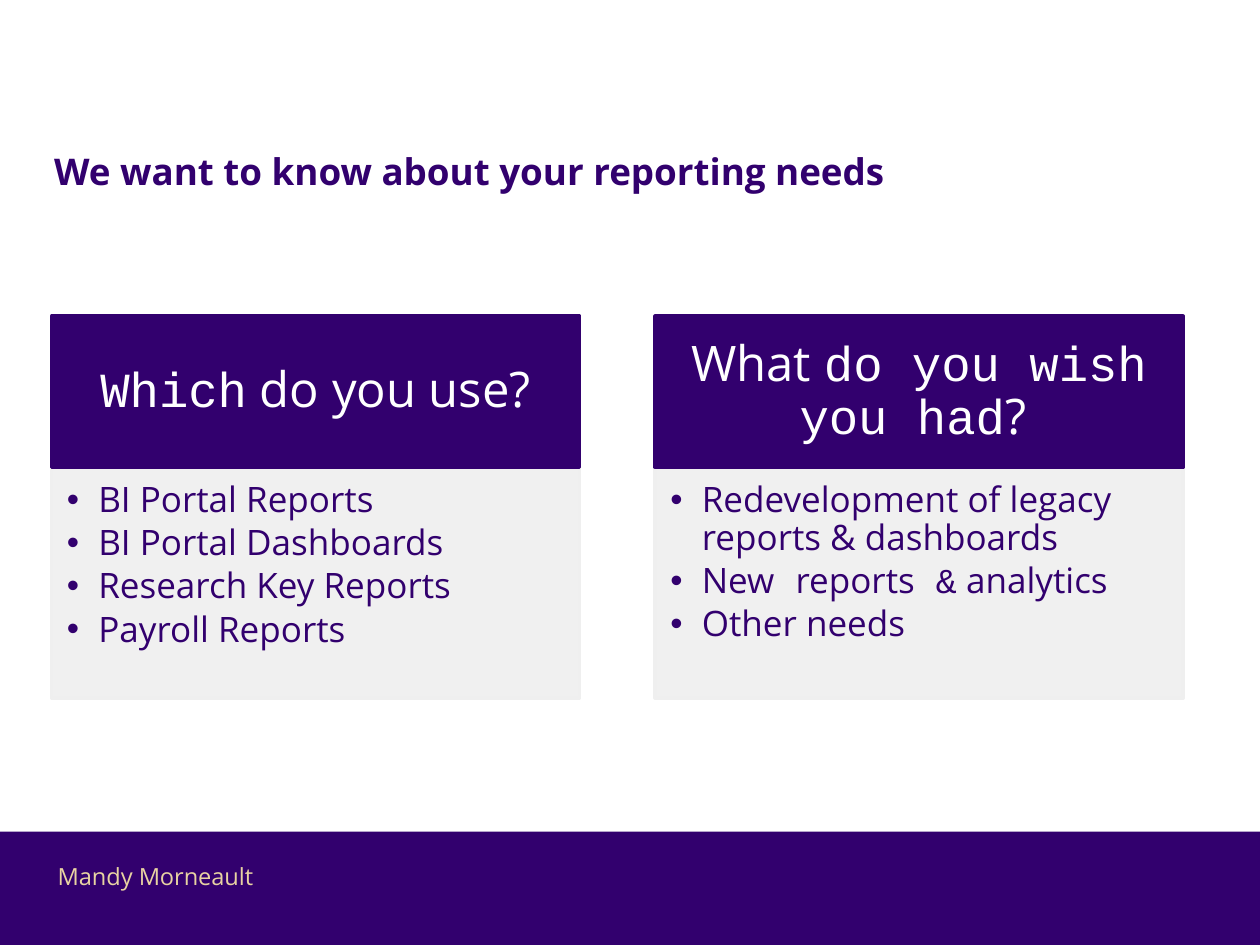
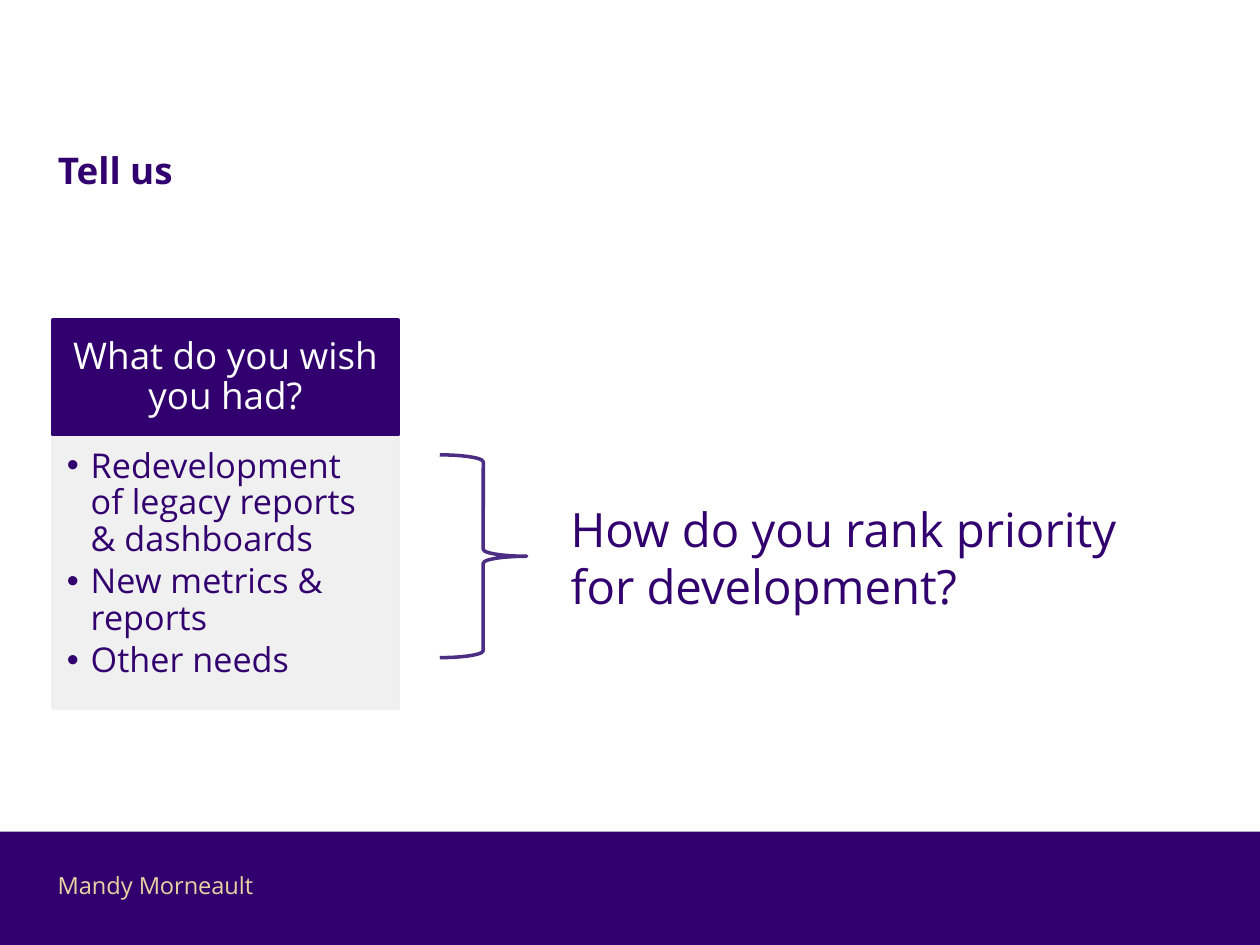
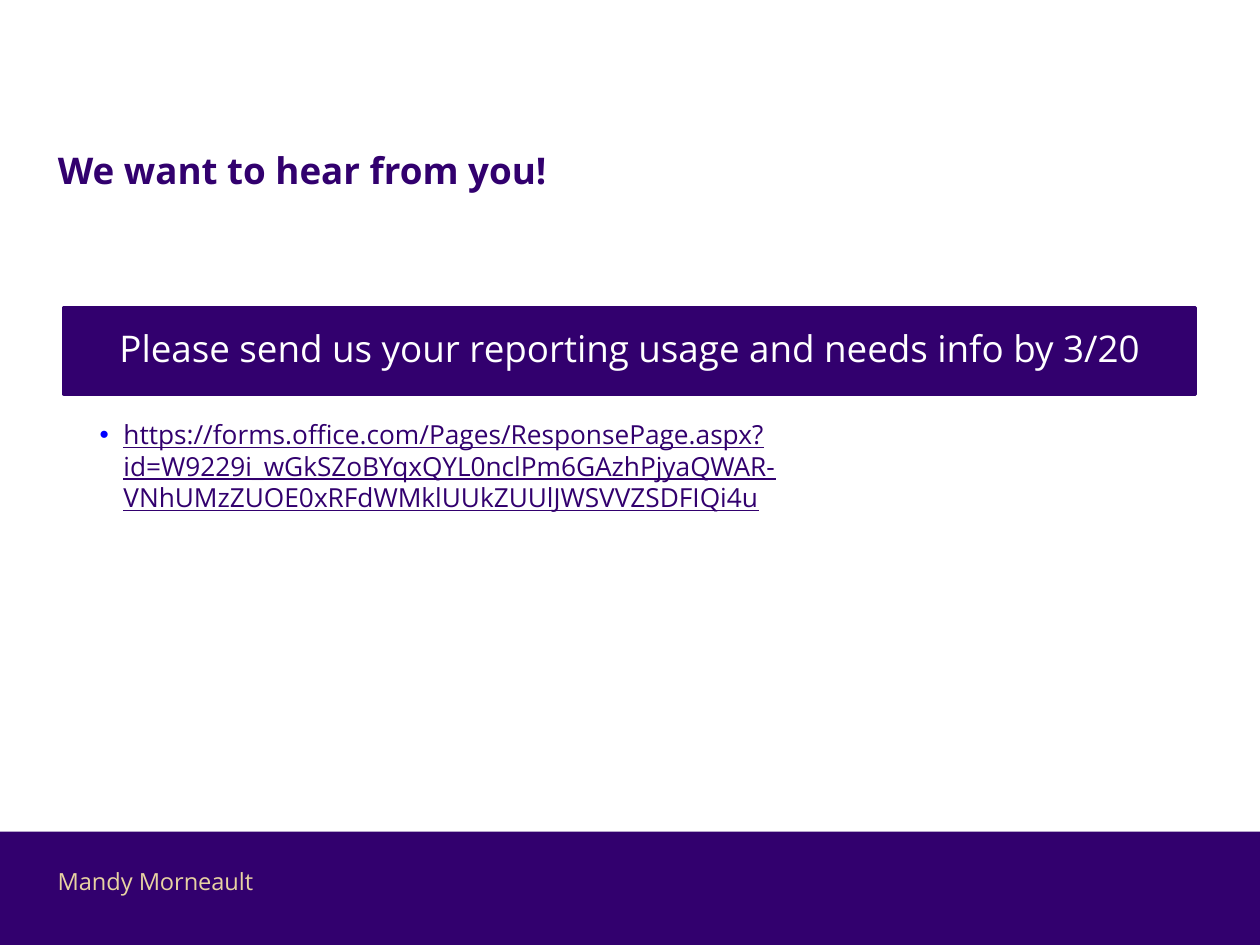
from lxml import etree
from pptx import Presentation
from pptx.dml.color import RGBColor as RGB
from pptx.enum.shapes import MSO_SHAPE as Shape
from pptx.enum.text import MSO_ANCHOR as Anchor, MSO_AUTO_SIZE as Auto, PP_ALIGN as Align
from pptx.oxml import parse_xml
from pptx.oxml.ns import nsdecls, qn
from pptx.util import Inches, Pt

INK = {"plum": "32006E", "brace": "4B2E83", "gold": "E8D3A2",
       "pale": "EFEFEF", "white": "FFFFFF", "blue": "0000FF"}
SANS, MONO = "Open Sans", "Courier New"


def place(shape, at, pad, fill=None, anchor=Anchor.TOP):
    """Set position, insets and flat fill; return the text frame."""
    shape.left, shape.top, shape.width, shape.height = map(Inches, at)
    if fill:
        shape.fill.solid()
        shape.fill.fore_color.rgb = shape.line.color.rgb = RGB.from_string(INK[fill])
        shape.line.width = Pt(2)
    frame = shape.text_frame
    frame.word_wrap, frame.auto_size = True, Auto.NONE
    frame.vertical_anchor = anchor
    (frame.margin_left, frame.margin_top,
     frame.margin_right, frame.margin_bottom) = map(Inches, pad)
    return frame


def write(para, text, size, tint, align=Align.LEFT, space=1.0, bold=None):
    """Fill a paragraph; every second piece between bars is monospaced."""
    para.alignment, para.line_spacing, para.space_before = align, space, Pt(0)
    font = para.font
    font.name, font.size, font.bold = SANS, Pt(size), bold
    font.color.rgb = RGB.from_string(INK[tint])
    for i, piece in enumerate(text.split("|")):
        if piece:
            run = para.add_run()
            run.text = piece
            if i % 2:
                run.font.name = MONO


deck = Presentation()
deck.slide_width, deck.slide_height = Inches(10), Inches(7.5)

# Slides: layout, title, title top, title inset, footer top
pages = [
    (3, "We want to know about your reporting needs", 0.76, 0.07, 6.79),
    (1, "Tell us", 0.75, 0.1, 6.86),
    (1, "We want to hear from you!", 0.75, 0.1, 6.83),
]
for layout, title, top, pad, foot in pages:
    slide = deck.slides.add_slide(deck.slide_layouts[layout])
    frame = place(slide.shapes.title, (0.36, top, 9.07, 0.82),
                  (pad, 0.05, pad, 0.05), anchor=Anchor.BOTTOM)
    write(frame.paragraphs[0], title, 21, "plum", bold=True)
    name = slide.shapes.add_textbox(0, 0, 0, 0)
    frame = place(name, (0.36, foot, 1.77, 0.33), (0.1, 0.05, 0.1, 0.05))
    write(frame.paragraphs[0], "Mandy Morneault", 13.5, "gold")

# Bottom band, kept on the master
band = deck.slides[0].shapes.add_shape(
    Shape.RECTANGLE, 0, Inches(6.6), Inches(10), Inches(0.9))
band.shadow.inherit = False
band.fill.solid()
band.fill.fore_color.rgb = RGB.from_string(INK["plum"])
band.line.fill.background()
band.element.nvSpPr.cNvPr.set("id", "99")
deck.slide_master.shapes.element.insert(2, band.element)

# Card styles: head size and insets, list size, insets, indent, spacing, gap, bullet
wide = dict(head=28, edge=(0.22, 0.12, 0.22, 0.12), size=20,
            pad=(0.12, 0.12, 0.16, 0.17), dent=0.25, space=0.9, gap=3, dot="plum")
slim = dict(head=21, edge=(0.16, 0.09, 0.16, 0.09), size=19.5,
            pad=(0.11, 0.11, 0.15, 0.17), dent=0.19, space=0.9, gap=2.9, dot="plum")
link = dict(head=21, edge=(0.09,) * 4, size=15,
            pad=(0.28, 0.02, 0.12, 0.02), dent=0.19, space=1.0, gap=0, dot="blue")

# Cards: slide, placeholder, style, head place, list top and height, head, items
cards = [
    (0, 1, wide, (0.41, 2.51, 4.19, 1.2), 3.71, 1.83, "|Which| do you use?",
     ["BI Portal Reports", "BI Portal Dashboards", "Research Key Reports",
      "Payroll Reports"]),
    (0, 2, wide, (5.2, 2.51, 4.19, 1.2), 3.71, 1.83, "What |do you wish you had|? ",
     ["Redevelopment of legacy reports & dashboards",
      "New| |reports| &| analytics", "Other needs"]),
    (1, 1, slim, (0.42, 2.54, 2.74, 0.91), 3.45, 2.17, "What do you wish you had?",
     ["Redevelopment of legacy reports & dashboards", "New metrics & reports",
      "Other needs"]),
    (2, 1, link, (0.51, 2.44, 8.98, 0.69), 3.3, 0.47,
     "Please send us your reporting usage and needs info by 3/20",
     ["https://forms.office.com/Pages/ResponsePage.aspx?id=W9229i_wGkSZoBYqxQYL0nclPm6GAzhPjyaQWAR-VNhUMzZUOE0xRFdWMklUUkZUUlJWSVVZSDFIQi4u"]),
]
for page, slot, look, at, top, tall, head, items in cards:
    slide = deck.slides[page]
    box = slide.shapes.add_shape(Shape.RECTANGLE, 0, 0, 0, 0)
    box.shadow.inherit = False
    frame = place(box, at, look["edge"], "plum", Anchor.MIDDLE)
    write(frame.paragraphs[0], head, look["head"], "white", Align.CENTER, 0.9)

    # List under the head
    body = slide.placeholders[slot]
    frame = place(body, (at[0], top, at[2], tall), look["pad"],
                  None if look is link else "pale")
    if look is not link:
        tone = body.element.spPr.find(qn("a:solidFill"))[0]
        etree.SubElement(tone, qn("a:alpha"), val="89000")
    for i, item in enumerate(items):
        para = frame.paragraphs[0] if i == 0 else frame.add_paragraph()
        props = para._p.get_or_add_pPr()
        dent = Inches(look["dent"])
        props.set("marL", str(dent))
        props.set("indent", str(-dent))
        for xml in (f'<a:buClr {nsdecls("a")}><a:srgbClr val="{INK[look["dot"]]}"/></a:buClr>',
                    f'<a:buFont {nsdecls("a")} typeface="Arial"/>',
                    f'<a:buChar {nsdecls("a")} char="•"/>'):
            props.append(parse_xml(xml))
        write(para, item, look["size"], "plum", space=look["space"])
        if i:
            para.space_before = Pt(look["gap"])
        if look is link:
            para.font.underline = True

# Brace and question beside the card
shapes = deck.slides[1].shapes
brace = shapes.add_shape(Shape.RIGHT_BRACE, Inches(3.49), Inches(3.61),
                         Inches(0.69), Inches(1.61))
brace.shadow.inherit = False
brace.adjustments[0] = 0.08
brace.fill.background()
brace.line.color.rgb = RGB.from_string(INK["brace"])
brace.line.width = Pt(2)
ask = shapes.add_textbox(0, 0, 0, 0)
frame = place(ask, (4.43, 3.92, 5, 1.01), (0.1, 0.05, 0.1, 0.05))
write(frame.paragraphs[0], "How do you rank priority for development?", 27, "plum")

deck.save("out.pptx")
